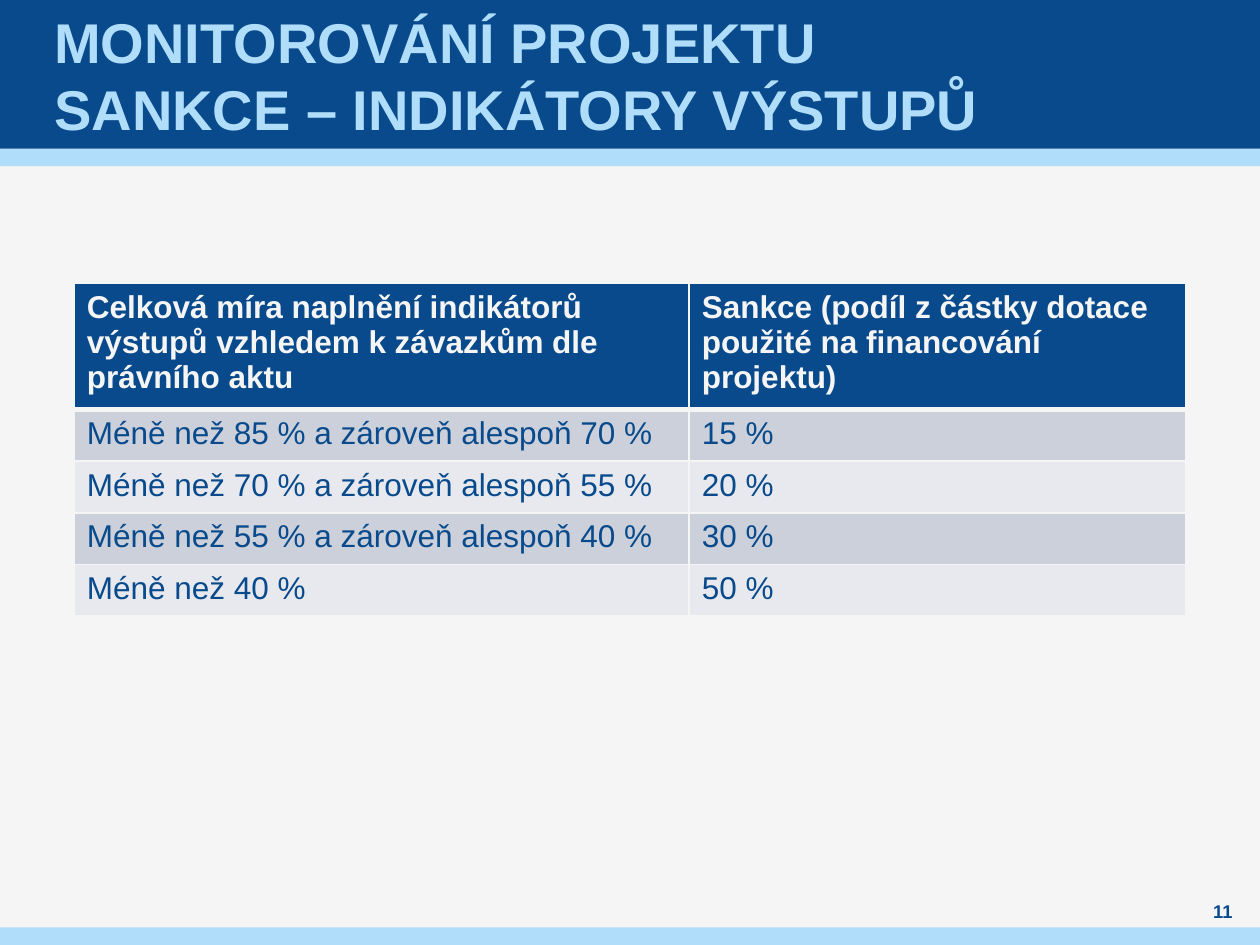
from lxml.etree import SubElement
from pptx import Presentation
from pptx.dml.color import RGBColor
from pptx.enum.shapes import MSO_SHAPE as SHAPE
from pptx.enum.text import MSO_ANCHOR as ANCHOR, PP_ALIGN as ALIGN
from pptx.oxml.ns import qn
from pptx.util import Inches, Pt

WIDTH, HEIGHT = 10, 7.5
NAVY, SKY, PAPER = "084A8B", "AFDDFA", "F5F5F5"
STRIPES = ("CCD0DA", "E7E9EE")
HEADER_H, STRIP_H = 1.18, 0.14
COLUMNS = (4.88, 3.94)
HEAD_ROW, BODY_ROW = 0.93, 0.41
ROWS = (
    ("Celková míra naplnění indikátorů výstupů vzhledem k závazkům dle právního aktu",
     "Sankce (podíl z částky dotace použité na financování projektu)"),
    ("Méně než 85 % a zároveň alespoň 70 %", "15 %"),
    ("Méně než 70 % a zároveň alespoň 55 %", "20 %"),
    ("Méně než 55 % a zároveň alespoň 40 %", "30 %"),
    ("Méně než 40 %", "50 %"),
)


def paint(fill, color):
    """Give a fill one solid hex colour."""
    fill.solid()
    fill.fore_color.rgb = RGBColor.from_string(color)


def write(tf, text, size=18, color=NAVY, bold=False, align=ALIGN.LEFT):
    """Put formatted text into a text frame; a vertical tab breaks the line."""
    p = tf.paragraphs[0]
    p.text, p.alignment = text, align
    for r in p.runs:
        r.font.name, r.font.size, r.font.bold = "Arial", Pt(size), bold
        paint(r.font.fill, color)


def add_band(s, top, height, color):
    """Draw a full-width band without outline."""
    sp = s.shapes.add_shape(SHAPE.RECTANGLE, 0, Inches(top), Inches(WIDTH), Inches(height))
    sp.shadow.inherit = False
    sp.line.fill.background()
    paint(sp.fill, color)


def add_label(s, box, text, inset=0, **style):
    """Add a wrapped, vertically centred text box."""
    tf = s.shapes.add_textbox(*map(Inches, box)).text_frame
    tf.word_wrap, tf.vertical_anchor = True, ANCHOR.MIDDLE
    tf.margin_left = tf.margin_right = Inches(inset)
    tf.margin_top = tf.margin_bottom = 0
    write(tf, text, **style)


def set_borders(cell, widths):
    """Line the cell edges, given as a mapping of side to points."""
    tc_pr = cell._tc.get_or_add_tcPr()
    for i, (side, width) in enumerate(widths.items()):
        ln = SubElement(tc_pr, qn(f"a:ln{side}"), w=str(Pt(width)))
        SubElement(SubElement(ln, qn("a:solidFill")), qn("a:srgbClr"), val=PAPER)
        tc_pr.insert(i, ln)


def add_sanctions(s, left, top):
    """Add the table of sanctions with a header and striped rows."""
    height = HEAD_ROW + BODY_ROW * (len(ROWS) - 1)
    table = s.shapes.add_table(len(ROWS), len(COLUMNS), Inches(left), Inches(top),
                               Inches(sum(COLUMNS)), Inches(height)).table
    for column, width in zip(table.columns, COLUMNS):
        column.width = Inches(width)
    for i, texts in enumerate(ROWS):
        head = i == 0
        table.rows[i].height = Inches(HEAD_ROW if head else BODY_ROW)
        for cell, text in zip(table.rows[i].cells, texts):
            write(cell.text_frame, text, color=PAPER if head else NAVY, bold=head)
            paint(cell.fill, NAVY if head else STRIPES[(i - 1) % 2])
            set_borders(cell, {"L": 1, "R": 1, "T": 3 if i == 1 else 1, "B": 3 if head else 1})


def main():
    """Build and save the slide."""
    prs = Presentation()
    prs.slide_width, prs.slide_height = Inches(WIDTH), Inches(HEIGHT)
    s = prs.slides.add_slide(prs.slide_layouts[6])
    paint(s.background.fill, PAPER)
    add_band(s, HEADER_H, STRIP_H, SKY)
    add_band(s, 0, HEADER_H, NAVY)
    add_band(s, HEIGHT - STRIP_H, STRIP_H, SKY)
    add_label(s, (0.39, 0, 9.21, HEADER_H),
              "MONITOROVÁNÍ PROJEKTU\vSANKCE – INDIKÁTORY VÝSTUPŮ",
              inset=0.04, size=32, color=SKY, bold=True)
    add_sanctions(s, (WIDTH - sum(COLUMNS)) / 2, HEIGHT * 0.3)
    add_label(s, (9.45, 7.13, 0.51, 0.2), "11", size=10.5, bold=True, align=ALIGN.CENTER)
    prs.save("out.pptx")


if __name__ == "__main__":
    main()
